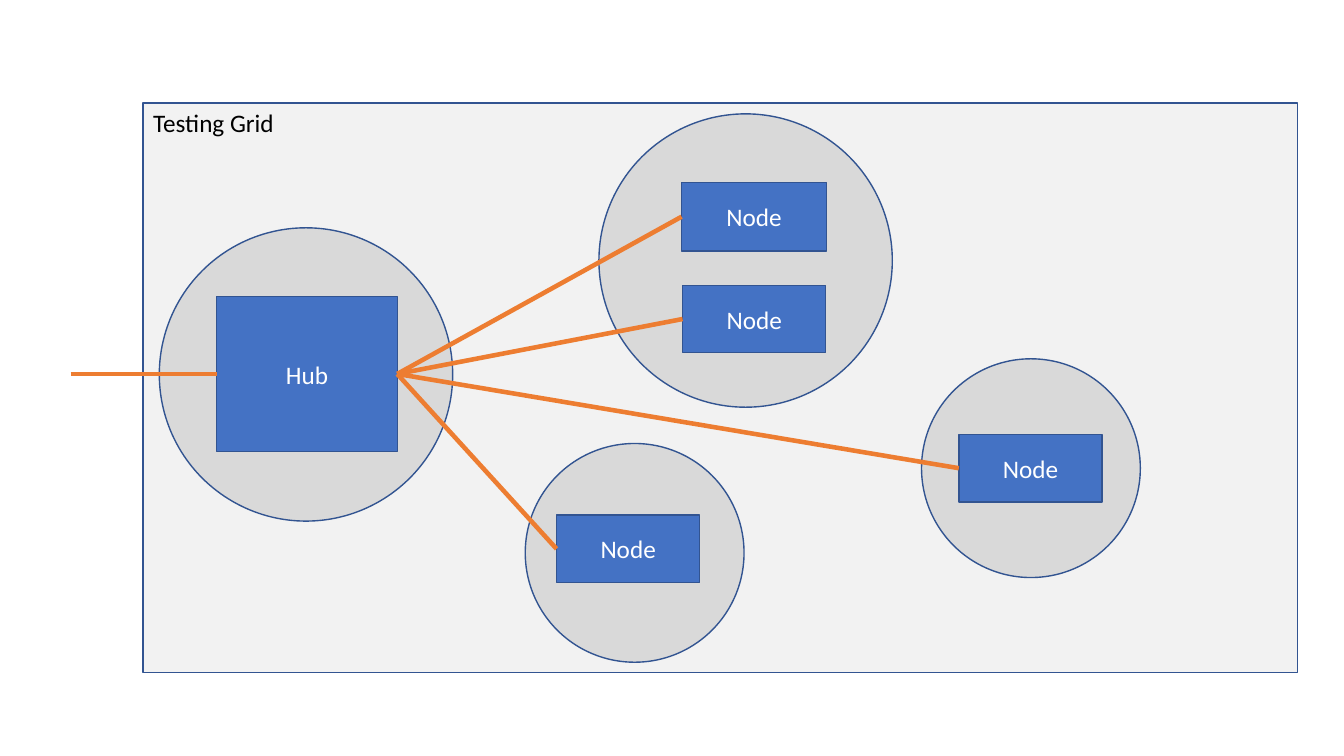
from lxml import etree
from pptx import Presentation
from pptx import util as u
from pptx.dml.color import RGBColor
from pptx.enum import shapes, text
from pptx.oxml.ns import qn

PANEL = RGBColor(0xF2, 0xF2, 0xF2)
MACHINE = RGBColor(0xD9, 0xD9, 0xD9)
BLUE = RGBColor(0x44, 0x72, 0xC4)
OUTLINE = RGBColor(0x32, 0x54, 0x91)
ORANGE = RGBColor(0xED, 0x7D, 0x31)
BLACK = RGBColor(0, 0, 0)
WHITE = RGBColor(0xFF, 0xFF, 0xFF)

CELL = u.Inches(0.1)
LEFT_SITE, RIGHT_SITE = 1, 3
LARGE, SMALL = 29.1, 21.7
NODE_SIZE = (14.2, 6.7)


class Diagram:
    """Draws styled elements on one slide, measured in columns and rows of a 0.1 inch grid."""

    font = {"name": "Calibri", "size": u.Pt(18)}
    centred = {"vertical_anchor": text.MSO_ANCHOR.MIDDLE}
    corner = {"vertical_anchor": text.MSO_ANCHOR.TOP}

    def __init__(self, prs):
        self.s = prs.slides.add_slide(prs.slide_layouts[6])

    def shape(self, kind, box, fill):
        sp = self.s.shapes.add_shape(kind, *(round(n * CELL) for n in box))
        sp.shadow.inherit = False
        sp.fill.solid()
        sp.fill.fore_color.rgb = fill
        sp.line.color.rgb = OUTLINE
        sp.line.width = u.Pt(1)
        return sp

    def label(self, sp, words, color, align, frame):
        tf = sp.text_frame
        for key, value in {"word_wrap": True, **frame}.items():
            setattr(tf, key, value)
        p = tf.paragraphs[0]
        p.alignment = align
        r = p.add_run()
        r.text = words
        for key, value in self.font.items():
            setattr(r.font, key, value)
        r.font.color.rgb = color

    def panel(self, words, *box):
        sp = self.shape(shapes.MSO_SHAPE.RECTANGLE, box, PANEL)
        self.label(sp, words, BLACK, text.PP_ALIGN.LEFT, self.corner)

    def machine(self, col, row, size):
        self.shape(shapes.MSO_SHAPE.OVAL, (col, row, size, size), MACHINE)

    def block(self, words, *box):
        sp = self.shape(shapes.MSO_SHAPE.RECTANGLE, box, BLUE)
        self.label(sp, words, WHITE, text.PP_ALIGN.CENTER, self.centred)
        return sp

    def link(self, target, source=None, start=(0, 0)):
        x, y = (round(n * CELL) for n in start)
        line = self.s.shapes.add_connector(shapes.MSO_CONNECTOR.STRAIGHT, x, y, x, y)
        if source is not None:
            line.begin_connect(source, RIGHT_SITE)
        line.end_connect(target, LEFT_SITE)
        line.line.color.rgb = ORANGE
        line.line.width = u.Pt(3.25)
        etree.SubElement(line._element.spPr, qn("a:effectLst"))


def main():
    prs = Presentation()
    prs.slide_width, prs.slide_height = u.Inches(13.33), u.Inches(7.5)
    d = Diagram(prs)

    d.panel("Testing Grid", 14.2, 10.2, 114.5, 56.5)
    for machine in [(15.8, 22.6, LARGE), (52.1, 44, SMALL),
                    (59.4, 11.3, LARGE), (91.4, 35.6, SMALL)]:
        d.machine(*machine)

    hub = d.block("Hub", 21.5, 29.4, 17.9, 15.4)
    d.link(hub, start=(7, 37.1))
    for col, row, size in [(67.6, 18.1, (14.4, 6.8)), (67.7, 28.3, NODE_SIZE),
                           (55.2, 51.1, NODE_SIZE), (95.1, 43.1, NODE_SIZE)]:
        node = d.block("Node", col, row, *size)
        d.link(node, source=hub)

    prs.save("out.pptx")


if __name__ == "__main__":
    main()
